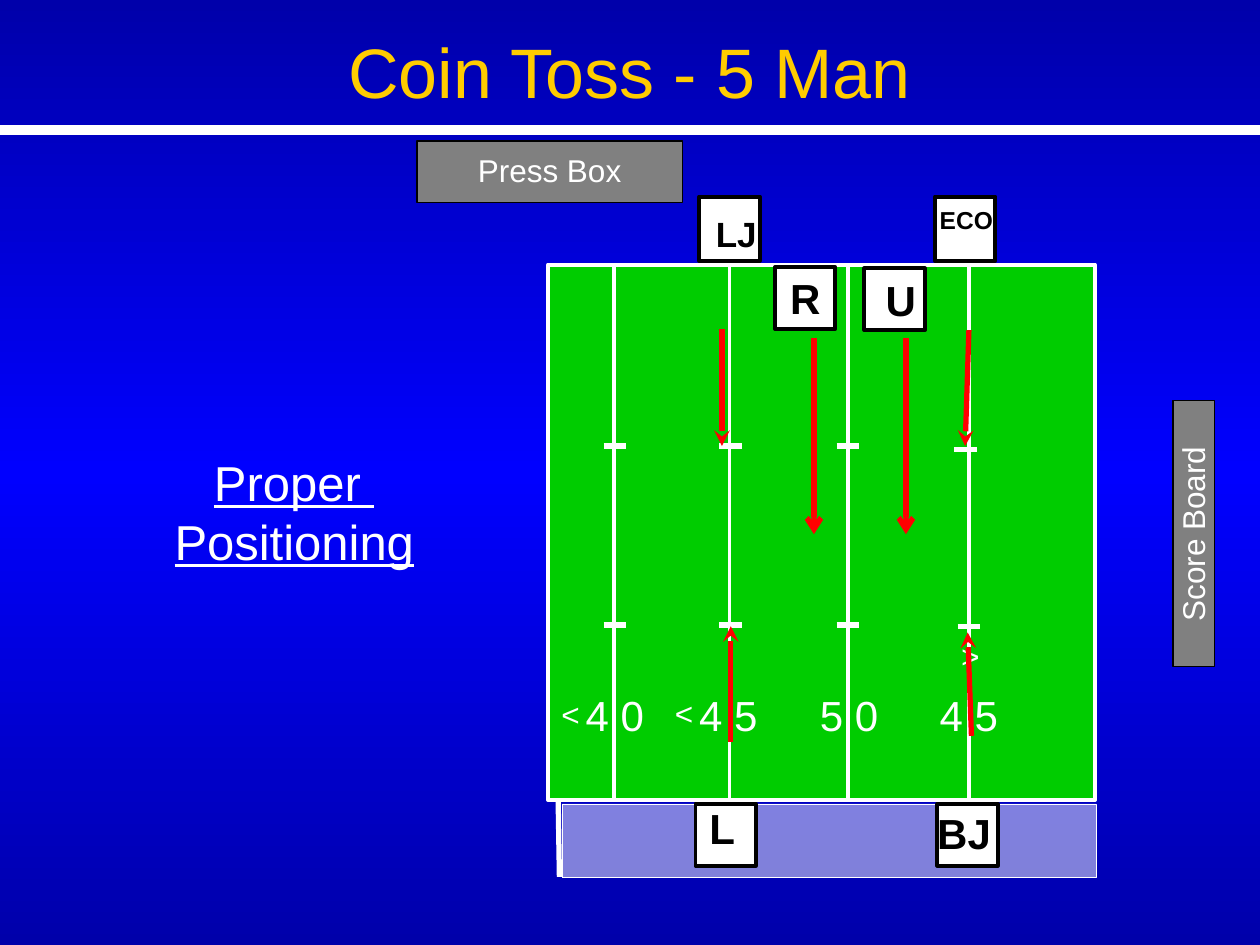
import copy
import pptx
import pptx.util
import pptx.dml.color
import pptx.enum.dml
import pptx.enum.shapes
import pptx.enum.text
import pptx.oxml
import pptx.oxml.ns

RGBColor = pptx.dml.color.RGBColor
WHITE = RGBColor(0xFF, 0xFF, 0xFF)
BLACK = RGBColor(0, 0, 0)
GRAY = RGBColor(0x80, 0x80, 0x80)
GREEN = RGBColor(0, 0xCC, 0)
RED = RGBColor(0xFF, 0, 0)
GOLD = RGBColor(0xFF, 0xCC, 0)
NAVY = RGBColor(0, 0, 0xAA)
BLUE = RGBColor(0, 0, 0xFF)

COLS, ROWS = 100, 75
prs = pptx.Presentation()
prs.slide_width = pptx.util.Inches(10)
prs.slide_height = pptx.util.Inches(7.5)
CELL = prs.slide_width / COLS

ALIGN = pptx.enum.text.PP_ALIGN
qn = pptx.oxml.ns.qn


def grid(*values):
    return [round(v * CELL) for v in values]


def add_rect(s, box, fill, line, width):
    sp = s.shapes.add_shape(pptx.enum.shapes.MSO_SHAPE.RECTANGLE, *grid(*box))
    sp.shadow.inherit = False
    sp.fill.solid()
    sp.fill.fore_color.rgb = fill
    sp.line.color.rgb = line
    sp.line.width = pptx.util.Pt(width)
    return sp


def add_line(s, x1, y1, x2, y2, color, width, head=None):
    cx = s.shapes.add_connector(
        pptx.enum.shapes.MSO_CONNECTOR.STRAIGHT, *grid(x1, y1, x2, y2))
    cx.line.color.rgb = color
    cx.line.width = pptx.util.Pt(width)
    if head:
        cx.line._get_or_add_ln().append(pptx.oxml.parse_xml(
            f'<a:tailEnd {pptx.oxml.ns.nsdecls("a")} type="{head}"/>'))
    cx._element.spPr.append(pptx.oxml.parse_xml(
        f'<a:effectLst {pptx.oxml.ns.nsdecls("a")}/>'))


def add_text(s, box, lines, size, color=WHITE, align=ALIGN.RIGHT, wrap=True,
             bold=None, underline=None, rotation=0, before=0):
    sp = s.shapes.add_textbox(*grid(*box))
    sp.rotation = rotation
    tf = sp.text_frame
    tf.word_wrap = wrap
    tf.text = "\n".join(lines)
    for p in tf.paragraphs:
        p.alignment = align
        p.space_before = pptx.util.Pt(before)
        p.font.name = "Arial"
        p.font.size = pptx.util.Pt(size)
        p.font.color.rgb = color
        p.font.bold = bold
        p.font.underline = underline
    return tf


def background(s):
    fill = s.background.fill
    fill.gradient()
    fill.gradient_angle = 270
    stops = next(s._element.iter(qn("a:gsLst")))
    stops.append(copy.deepcopy(stops[-1]))
    for stop, pos, color in zip(fill.gradient_stops, (0, 0.5, 1), (NAVY, BLUE, NAVY)):
        stop.position = pos
        stop.color.rgb = color


def header(s, x, y, w, h):
    add_text(s, (x + 12.7, y + 1.8, 74.5, 7.7), ["Coin Toss - 5 Man"], 40, GOLD, ALIGN.CENTER)
    add_line(s, x, y + h, x + w, y + h, WHITE, 6)


def press_box(s, x, y, w, h):
    add_rect(s, (x, y, w, h), GRAY, BLACK, 0.75)
    add_text(s, (x + 3.8, y + 0.3, 13.4, 4), ["Press Box"], 18, wrap=False)


def score_board(s, x, y, w, h):
    add_rect(s, (x, y, w, h), GRAY, BLACK, 0.75)
    add_text(s, (x - 6.4, y + 8.6, 15.9, 4), ["Score Board"], 18, rotation=270)


def field(s, x, y, w, h):
    add_rect(s, (x, y, w, h), GREEN, WHITE, 2.25)
    yards = [(5.2, "4 0"), (14.4, "4 5"), (23.8, "5 0"), (33.4, "4 5")]
    hashes = [(5.3, 14.4, 28.6), (14.5, 14.4, 28.6), (23.8, 14.4, 28.6)]
    for dx, _ in yards:
        add_line(s, x + dx, y, x + dx, y + h, WHITE, 2.25)
    for (_, label), dx in zip(yards, (1, 10, 19.6, 29.1)):
        add_text(s, (x + dx, y + 33.2, 7.6, 5), [label], 24)
    marks = [(dx, dy) for dx, *rows in hashes for dy in rows]
    for dx, dy in marks + [(33.1, 14.7), (33.4, 28.7)]:
        add_line(s, x + dx - 0.9, y + dy, x + dx + 0.9, y + dy, WHITE, 3)
    for dx, dy, turn in ((0, 33.7, 0), (9, 33.6, 0), (31.8, 29.4, 180)):
        add_text(s, (x + dx, y + dy, 3.5, 4), ["<"], 18, wrap=False, rotation=turn)


def sideline(s, x, y, w, h):
    add_line(s, x - 0.3, y - 0.2, x - 0.2, y + h, WHITE, 3)
    sp = add_rect(s, (x, y, w, h), WHITE, WHITE, 0.25)
    sp.line.dash_style = pptx.enum.dml.MSO_LINE.ROUND_DOT
    color = sp._element.spPr.find(qn("a:solidFill"))[0]
    color.append(pptx.oxml.parse_xml(
        f'<a:alpha {pptx.oxml.ns.nsdecls("a")} val="50000"/>'))


def movements(s, x, y):
    for x1, y1, x2, y2, head in (
            (14.5, 37.9, 14.5, 28.7, "stealth"), (13.8, 5.1, 13.8, 14.4, "stealth"),
            (33.6, 37.4, 33.3, 29.2, "stealth"), (33.4, 5.2, 33.1, 14.4, "stealth"),
            (28.4, 5.8, 28.4, 21.4, "arrow"), (21.1, 5.8, 21.1, 21.4, "arrow")):
        add_line(s, x + x1, y + y1, x + x2, y + y2, RED, 3, head)


def official(s, x, y, h, label, size, dx, dy, w):
    add_rect(s, (x, y, 4.8, h), WHITE, BLACK, 2.25)
    return add_text(s, (x + dx, y + dy, w, 5), [label], size, BLACK, ALIGN.LEFT,
                    bold=True, before=2)


def line_judge(s, x, y):
    tf = official(s, x, y, 5.1, " ", 24, -0.6, 0.2, 6.6)
    r = tf.paragraphs[0].add_run()
    r.text = "LJ"
    r.font.size = pptx.util.Pt(20)


def main():
    s = prs.slides.add_slide(prs.slide_layouts[6])
    background(s)
    press_box(s, 33.1, 11.2, 21.1, 4.9)
    header(s, 0, 0, COLS, 10.3)
    add_text(s, (12.7, 35.4, 21.3, 18.9), ["Proper ", "Positioning"], 28,
             align=ALIGN.CENTER, wrap=False, underline=True)
    field(s, 43.5, 21, 43.4, 42.5)
    sideline(s, 44.6, 63.8, 42.4, 5.8)
    score_board(s, 93.1, 31.8, 3.3, 21.1)
    movements(s, 43.5, 21)
    for crew in (
            (74.2, 15.6, 5.1, "ECO", 14, -0.6, 0.2, 6.6),
            (74.4, 63.8, 4.9, "BJ", 24, -1, -0.2, 9),
            (55.2, 63.8, 4.9, " L", 24, -0.8, -0.6, 6.7),
            (68.6, 21.3, 4.9, "U", 24, 0.7, 0, 3.4),
            (61.5, 21.2, 4.9, " R", 24, -0.7, -0.1, 7.6)):
        official(s, *crew)
    line_judge(s, 55.5, 15.6)
    prs.save("out.pptx")


if __name__ == "__main__":
    main()
